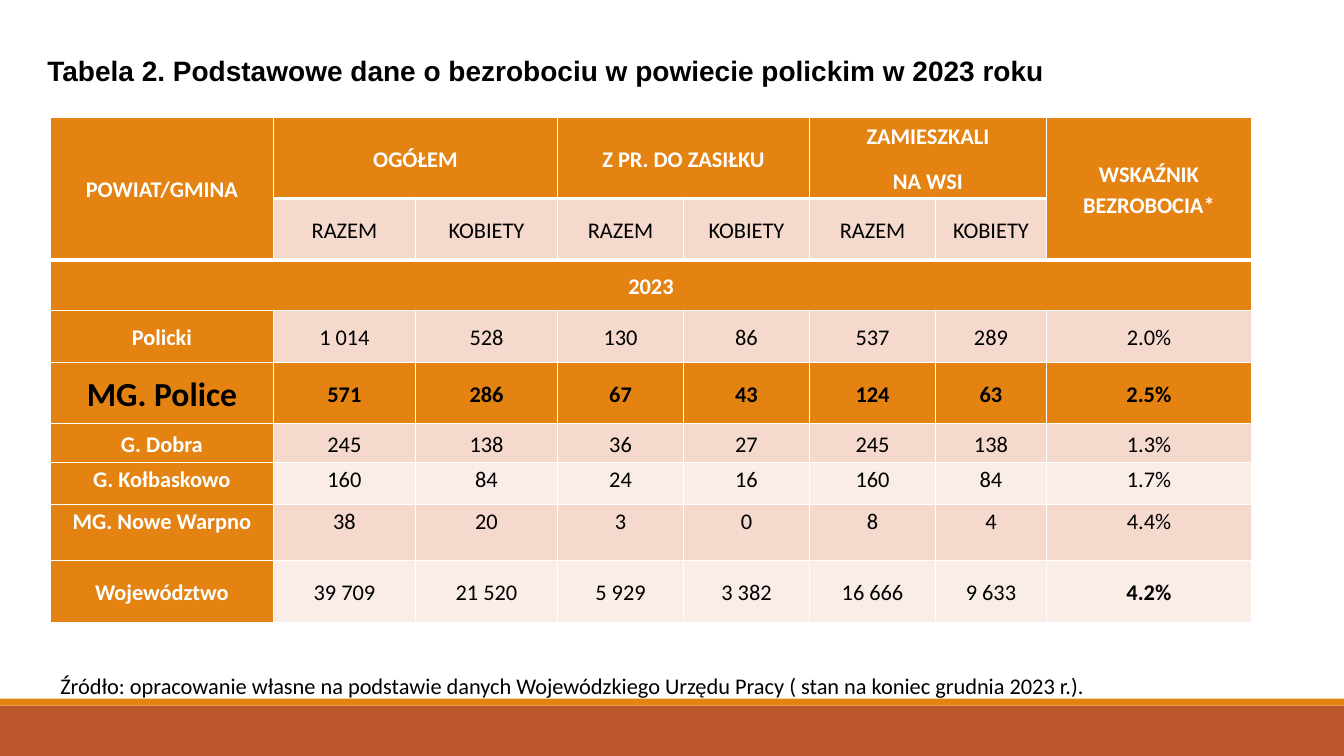
from lxml.etree import SubElement
from pptx import Presentation
from pptx.dml.color import RGBColor
from pptx.enum.shapes import MSO_SHAPE
from pptx.enum.text import MSO_ANCHOR, MSO_AUTO_SIZE, PP_ALIGN
from pptx.oxml.ns import qn
from pptx.util import Pt

ORANGE, RUST, PEACH, PALE = "E48312", "BD582C", "F5D9CC", "FAEDE7"
BLACK, WHITE = "000000", "FFFFFF"
TOP, MIDDLE = MSO_ANCHOR.TOP, MSO_ANCHOR.MIDDLE

COL_WIDTHS = [159.3, 101.5, 101.5, 90, 90, 90, 79.2, 146.5]
ROWS = [
    (58.2, ORANGE, MIDDLE, "POWIAT/GMINA|OGÓŁEM||Z PR. DO ZASIŁKU||ZAMIESZKALI\nNA WSI||WSKAŹNIK\vBEZROBOCIA*"),
    (42, PEACH, MIDDLE, "|RAZEM|KOBIETY|RAZEM|KOBIETY|RAZEM|KOBIETY|"),
    (36, ORANGE, MIDDLE, "2023|||||||"),
    (37.6, PEACH, MIDDLE, "Policki|1 014|528|130|86|537|289|2.0%"),
    (43.2, ORANGE, MIDDLE, "MG. Police|571|286|67|43|124|63|2.5%"),
    (28.2, PEACH, MIDDLE, "G. Dobra|245|138|36|27|245|138|1.3%"),
    (30, PALE, TOP, "G. Kołbaskowo|160|84|24|16|160|84|1.7%"),
    (39.6, PEACH, TOP, "MG. Nowe Warpno|38|20|3|0|8|4|4.4%"),
    (44.8, PALE, MIDDLE, "Województwo|39 709|21 520|5 929|3 382|16 666|9 633|4.2%"),
]
MERGES = [(0, 0, 1, 0), (0, 1, 0, 2), (0, 3, 0, 4), (0, 5, 0, 6), (0, 7, 1, 7), (2, 0, 2, 7)]
HEADER_ROWS, POLICE_ROW, THICK_RULES = (0, 2), 4, (1, 2)


def rgb(value):
    return RGBColor.from_string(value)


def apply(target, values):
    for name, value in values.items():
        setattr(target, name, value)


class SlideBuilder:
    """Holds the text style and the current slide, and adds elements in points."""

    def __init__(self, prs):
        self.s = prs.slides.add_slide(prs.slide_layouts[5])
        self.font = {"name": "Calibri", "size": Pt(16), "bold": False}
        self.cell_paragraph = {"alignment": PP_ALIGN.CENTER, "line_spacing": 1.12, "space_after": Pt(10.3)}
        self.cell_margins = {"margin_left": Pt(3), "margin_right": Pt(3), "margin_top": 0, "margin_bottom": 0}

    def text(self, tf, text, paragraph, color=BLACK, **font):
        tf.text = text
        for p in tf.paragraphs:
            apply(p, paragraph)
            for r in p.runs:
                apply(r.font, {**self.font, **font})
                r.font.color.rgb = rgb(color)

    def bar(self, top, height, color):
        sp = self.s.shapes.add_shape(MSO_SHAPE.RECTANGLE, 0, Pt(top), Pt(960), Pt(height))
        sp.shadow.inherit = False
        sp.fill.solid()
        sp.fill.fore_color.rgb = rgb(color)
        sp.line.fill.background()

    def place(self, sp, left, top, width, height):
        apply(sp, {"left": Pt(left), "top": Pt(top), "width": Pt(width), "height": Pt(height)})
        apply(sp.text_frame, {"word_wrap": True, "vertical_anchor": TOP, "auto_size": MSO_AUTO_SIZE.NONE})
        return sp.text_frame

    def title(self, text, *box):
        tf = self.place(self.s.shapes.title, *box)
        paragraph = {"alignment": PP_ALIGN.LEFT, "space_after": Pt(10)}
        self.text(tf, text, paragraph, name="Arial", size=Pt(20), bold=True)

    def note(self, text, *box):
        tf = self.place(self.s.shapes.add_textbox(0, 0, 0, 0), *box)
        self.text(tf, text, {"alignment": PP_ALIGN.JUSTIFY, "line_spacing": 1.15, "space_after": Pt(12)})

    def borders(self, cell, top, bottom):
        tcPr = cell._tc.get_or_add_tcPr()
        for side, width in (("L", 1), ("R", 1), ("T", top), ("B", bottom)):
            ln = SubElement(tcPr, qn(f"a:ln{side}"), w=str(Pt(width)))
            SubElement(SubElement(ln, qn("a:solidFill")), qn("a:srgbClr"), val=WHITE)

    def cell(self, cell, text, fill, anchor, rules, color, **font):
        apply(cell, {**self.cell_margins, "vertical_anchor": anchor})
        self.borders(cell, *rules)
        cell.fill.solid()
        cell.fill.fore_color.rgb = rgb(fill)
        self.text(cell.text_frame, text, self.cell_paragraph, color, **font)

    def table(self, left, top):
        width, height = sum(COL_WIDTHS), sum(row[0] for row in ROWS)
        frame = self.s.shapes.add_table(len(ROWS), len(COL_WIDTHS), Pt(left), Pt(top), Pt(width), Pt(height))
        table = frame.table
        apply(table, {"first_row": False, "horz_banding": False})
        for column, column_width in zip(table.columns, COL_WIDTHS):
            column.width = Pt(column_width)
        for i, (row_height, fill, anchor, texts) in enumerate(ROWS):
            table.rows[i].height = Pt(row_height)
            rules = [3 if edge in THICK_RULES else 1 for edge in (i, i + 1)]
            for j, text in enumerate(texts.split("|")):
                heading = i in HEADER_ROWS or j == 0
                strong = heading or i == POLICE_ROW or text == "4.2%"
                color = WHITE if heading and i != POLICE_ROW else BLACK
                size = Pt(24 if (i, j) == (POLICE_ROW, 0) else 16)
                self.cell(table.cell(i, j), text, ORANGE if heading else fill, anchor, rules, color,
                          bold=strong, size=size)
        for first_row, first_col, last_row, last_col in MERGES:
            table.cell(first_row, first_col).merge(table.cell(last_row, last_col))


def main():
    prs = Presentation()
    apply(prs, {"slide_width": Pt(960), "slide_height": Pt(540)})
    slide = SlideBuilder(prs)
    slide.bar(504, 36, RUST)
    slide.bar(499, 5, ORANGE)
    slide.title("Tabela 2. Podstawowe dane o bezrobociu w powiecie polickim w 2023 roku", 26.6, 34.6, 844.6, 31.7)
    slide.note("Źródło: opracowanie własne na podstawie danych Wojewódzkiego Urzędu Pracy "
               "( stan na koniec grudnia 2023 r.).", 36, 473.8, 887.8, 28)
    slide.table(36, 83.6)
    prs.save("out.pptx")


if __name__ == "__main__":
    main()
